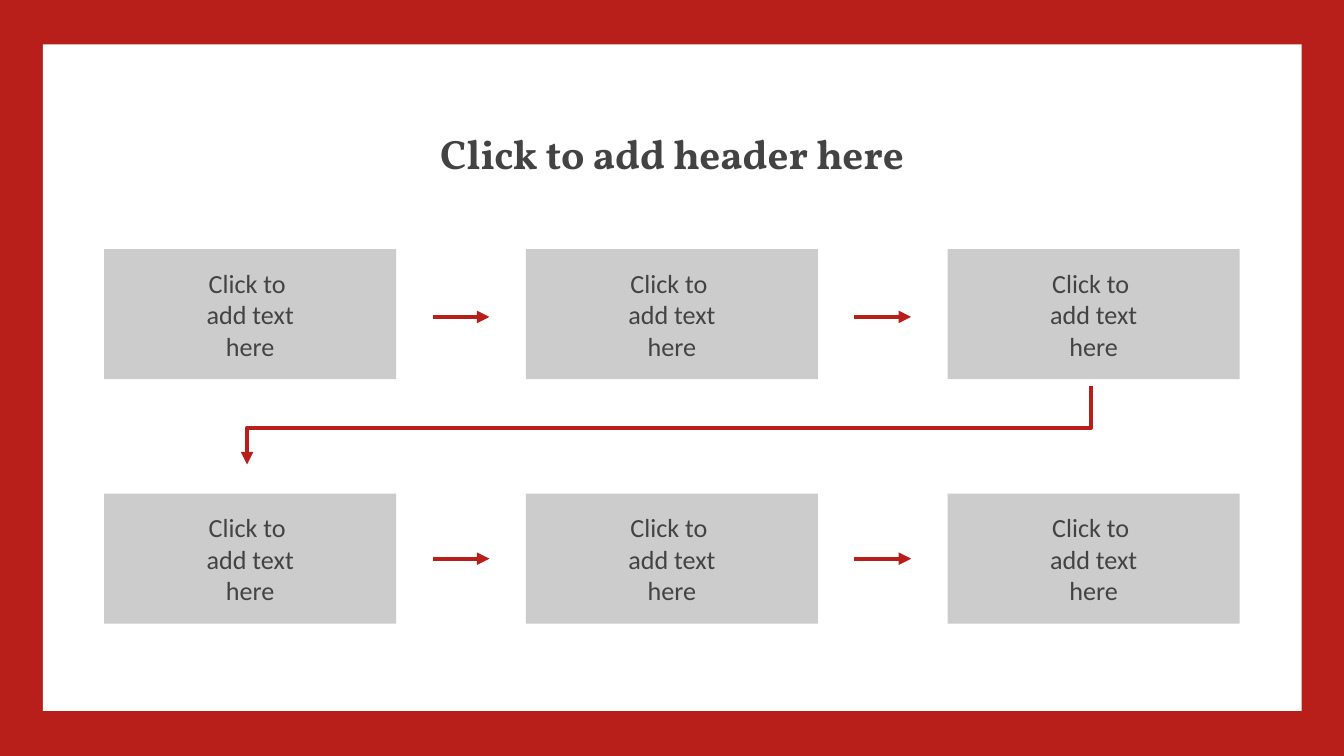
from dataclasses import dataclass

from lxml.etree import SubElement
from pptx import Presentation
from pptx.dml.color import RGBColor
from pptx.enum.shapes import MSO_CONNECTOR, MSO_SHAPE
from pptx.enum.text import MSO_ANCHOR, MSO_AUTO_SIZE, PP_ALIGN
from pptx.oxml.ns import qn
from pptx.util import Cm, Pt


@dataclass(frozen=True)
class Theme:
    red: RGBColor = RGBColor(0xB8, 0x1F, 0x1A)
    white: RGBColor = RGBColor(0xFF, 0xFF, 0xFF)
    grey: RGBColor = RGBColor(0xCC, 0xCC, 0xCC)
    ink: RGBColor = RGBColor(0x43, 0x43, 0x43)
    header_font: str = "Vollkorn"
    body_font: str = "Calibri"
    header_size: Pt = Pt(22)
    body_size: Pt = Pt(14)
    line_width: Pt = Pt(2.25)
    inset: Cm = Cm(0.25)


class FlowSlide:
    def __init__(self, page, theme):
        self.page = page
        self.theme = theme
        page.background.fill.solid()
        page.background.fill.fore_color.rgb = theme.red

    def set_text(self, shape, text, font, size, anchor, bold=False):
        frame = shape.text_frame
        frame.text = text
        frame.word_wrap = True
        frame.auto_size = MSO_AUTO_SIZE.NONE
        frame.vertical_anchor = anchor
        frame.margin_left = frame.margin_right = self.theme.inset
        frame.margin_top = frame.margin_bottom = self.theme.inset
        for para in frame.paragraphs:
            para.alignment = PP_ALIGN.CENTER
            for span in para.runs:
                span.font.name = font
                span.font.size = size
                span.font.bold = bold
                span.font.color.rgb = self.theme.ink

    def header(self, text, left, top, width, height):
        title = self.page.shapes.title
        title.left, title.top = Cm(left), Cm(top)
        title.width, title.height = Cm(width), Cm(height)
        title.element.getparent().append(title.element)
        self.set_text(title, text, self.theme.header_font,
                      self.theme.header_size, MSO_ANCHOR.TOP, bold=True)

    def panel(self, left, top, width, height, color):
        box = self.page.shapes.add_shape(
            MSO_SHAPE.RECTANGLE, Cm(left), Cm(top), Cm(width), Cm(height))
        box.shadow.inherit = False
        box.fill.solid()
        box.fill.fore_color.rgb = color
        box.line.fill.background()
        return box

    def step(self, text, left, top, width, height):
        box = self.panel(left, top, width, height, self.theme.grey)
        self.set_text(box, text, self.theme.body_font,
                      self.theme.body_size, MSO_ANCHOR.MIDDLE)

    def point(self, shape):
        shape.line.color.rgb = self.theme.red
        shape.line.width = self.theme.line_width
        outline = shape.element.spPr.find(qn("a:ln"))
        SubElement(outline, qn("a:tailEnd"), type="triangle")

    def arrow(self, start, end, height):
        line = self.page.shapes.add_connector(
            MSO_CONNECTOR.STRAIGHT, Cm(start), Cm(height), Cm(end), Cm(height))
        self.point(line)
        SubElement(line.element.spPr, qn("a:effectLst"))

    def return_arrow(self, points):
        start, *rest = [(Cm(x), Cm(y)) for x, y in points]
        builder = self.page.shapes.build_freeform(*start)
        builder.add_line_segments(rest, close=False)
        bend = builder.convert_to_shape()
        bend.shadow.inherit = False
        bend.fill.background()
        self.point(bend)


def main():
    deck = Presentation()
    deck.slide_width, deck.slide_height = Cm(25.4), Cm(14.29)
    theme = Theme()
    slide = FlowSlide(deck.slides.add_slide(deck.slide_layouts[5]), theme)
    slide.panel(0.81, 0.84, 23.79, 12.6, theme.white)

    columns, column_gap = 3, 7.97
    for row in range(2):
        for column in range(columns):
            shift = column * column_gap
            slide.step("Click to \nadd text\nhere",
                       1.97 + shift, 4.71 + row * 4.62, 5.52, 2.46)
            if column < columns - 1:
                slide.arrow(8.18 + shift, 9.25 + shift, 5.99 + row * 4.57)

    slide.return_arrow([(20.62, 7.29), (20.62, 8.09), (4.67, 8.09), (4.67, 8.78)])
    slide.header("Click to add header here", 6.91, 2.18, 11.58, 1.3)
    deck.save("out.pptx")


if __name__ == "__main__":
    main()
